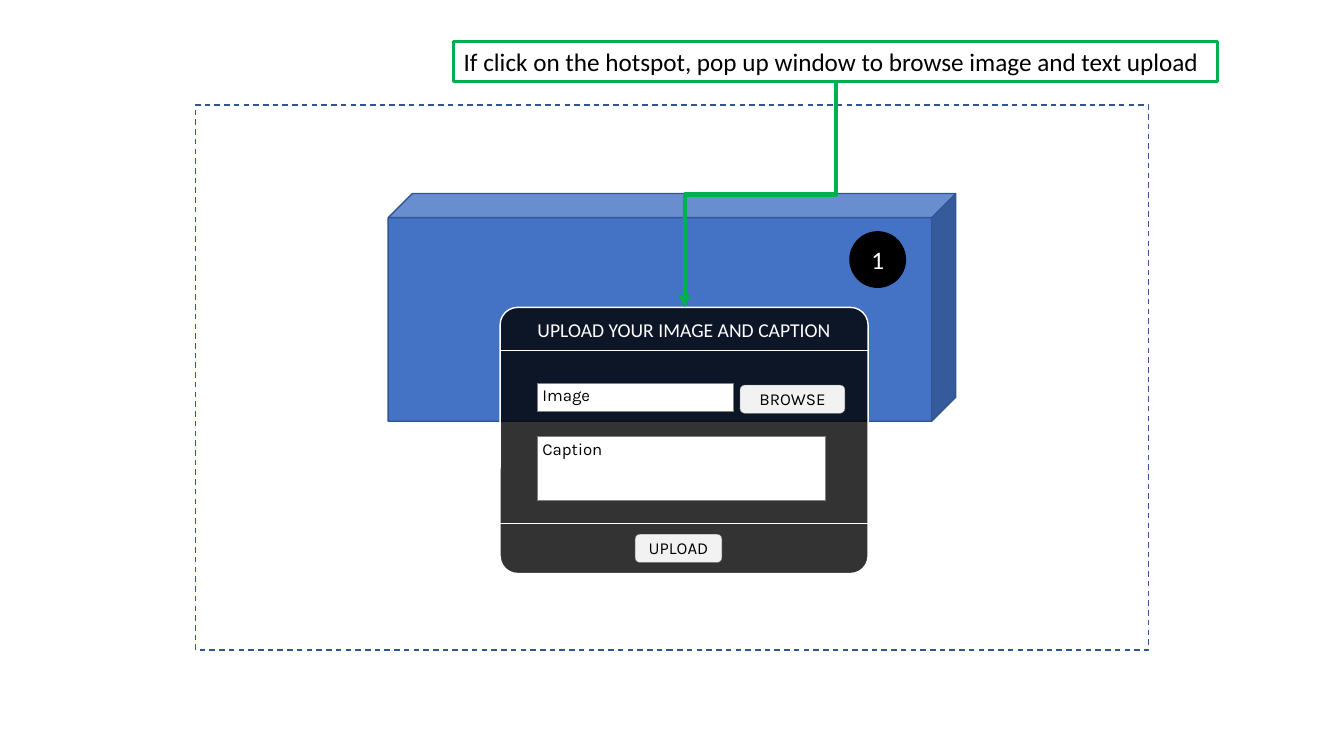
"""Builds a slide that shows the upload window opened by a hotspot."""
from lxml.etree import SubElement
from pptx import Presentation
from pptx.dml.color import RGBColor
from pptx.enum.dml import MSO_LINE
from pptx.enum.shapes import MSO_CONNECTOR as LINK, MSO_SHAPE as SHAPE
from pptx.enum.text import MSO_ANCHOR as ANCHOR, MSO_AUTO_SIZE as AUTO, PP_ALIGN as ALIGN
from pptx.oxml.ns import qn
from pptx.util import Pt

PX = 9144
THEME = {
    "white": "FFFFFF", "black": "000000", "blue": "4472C4", "navy": "325491",
    "green": "00B050", "grey": "808080", "pale": "F2F2F2",
    "large": 18, "title": 14, "small": 12,
    "main": "Calibri", "form": "Karla",
}
FIELD_FRAME = {"margin_left": 5 * PX, "margin_right": 5 * PX, "margin_top": 2 * PX,
               "margin_bottom": 2 * PX, "word_wrap": False, "vertical_anchor": ANCHOR.TOP}
BUTTON_FRAME = {"margin_top": 0, "margin_bottom": PX}
CALLOUT_FRAME = {"word_wrap": False, "auto_size": AUTO.SHAPE_TO_FIT_TEXT,
                 "vertical_anchor": ANCHOR.TOP}


def add_box(kind, bounds, fill, outline, weight, text="", size="small", font="form",
            color="black", align=ALIGN.CENTER, frame=None):
    box = slide.shapes.add_shape(kind, *(n * PX for n in bounds))
    box.shadow.inherit = False
    if fill:
        box.fill.solid()
        box.fill.fore_color.rgb = RGBColor.from_string(THEME[fill])
    else:
        box.fill.background()
    box.line.color.rgb = RGBColor.from_string(THEME[outline])
    box.line.width = Pt(weight)
    if text:
        for name, value in (frame or {}).items():
            setattr(box.text_frame, name, value)
        paragraph = box.text_frame.paragraphs[0]
        paragraph.alignment = align
        run = paragraph.add_run()
        run.text = text
        for name, value in {"size": Pt(THEME[size]), "name": THEME[font]}.items():
            setattr(run.font, name, value)
        run.font.color.rgb = RGBColor.from_string(THEME[color])
    return box


def add_link(kind, ends, color, weight):
    link = slide.shapes.add_connector(kind, *(n * PX for n in ends))
    link.line.color.rgb = RGBColor.from_string(THEME[color])
    link.line.width = Pt(weight)
    SubElement(link._element.spPr, qn("a:effectLst"))
    return link


deck = Presentation()
deck.slide_width, deck.slide_height = 1333 * PX, 750 * PX
slide = deck.slides.add_slide(deck.slide_layouts[6])

stage = add_box(SHAPE.RECTANGLE, (194, 104, 945, 541), None, "navy", 1)
stage.line.dash_style = MSO_LINE.DASH
block = add_box(SHAPE.CUBE, (385, 192, 563, 226), "blue", "navy", 1)
block.adjustments[0] = 0.106
add_box(SHAPE.OVAL, (843, 230, 55, 55), "black", "black", 1,
        "1", "large", "main", "white")

window = add_box(SHAPE.ROUNDED_RECTANGLE, (496, 305, 365, 264), "black", "white", 1,
                 "UPLOAD YOUR IMAGE AND CAPTION", "title", "main", "white",
                 frame={"vertical_anchor": ANCHOR.TOP})
window.adjustments[0] = 0.066
window_color = window._element.spPr.find(qn("a:solidFill"))[0]
SubElement(window_color, qn("a:alpha")).set("val", "80000")
for divider_y in (348, 519):
    add_link(LINK.STRAIGHT, (496, divider_y, 861, divider_y), "white", 0.5)

for label, bounds in (("Caption", (533, 433, 286, 63)), ("Image", (533, 380, 194, 28))):
    add_box(SHAPE.RECTANGLE, bounds, "white", "grey", 0.25, label,
            align=ALIGN.LEFT, frame=FIELD_FRAME)
for label, bounds in (("BROWSE", (734, 382, 104, 28)), ("UPLOAD", (630, 530, 86, 28))):
    add_box(SHAPE.ROUNDED_RECTANGLE, bounds, "pale", "grey", 0.25, label,
            frame=BUTTON_FRAME)

callout = add_box(SHAPE.RECTANGLE, (450, 41, 758, 40), None, "green", 2.25,
                  "If click on the hotspot, pop up window to browse image and text upload",
                  "large", "main", align=ALIGN.LEFT, frame=CALLOUT_FRAME)
arrow = add_link(LINK.ELBOW, (829, 81, 679, 305), "green", 3)
arrow.begin_connect(callout, 2)
arrow.end_connect(window, 0)
turn = arrow._element.spPr.find(qn("a:xfrm"))
turn.attrib.pop("flipH", None)
turn.set("rot", "5400000")
for name, value in {"left": 642, "top": 118, "width": 224, "height": 150}.items():
    setattr(arrow, name, value * PX)
SubElement(arrow.line._get_or_add_ln(), qn("a:tailEnd")).set("type", "triangle")

deck.save("out.pptx")
